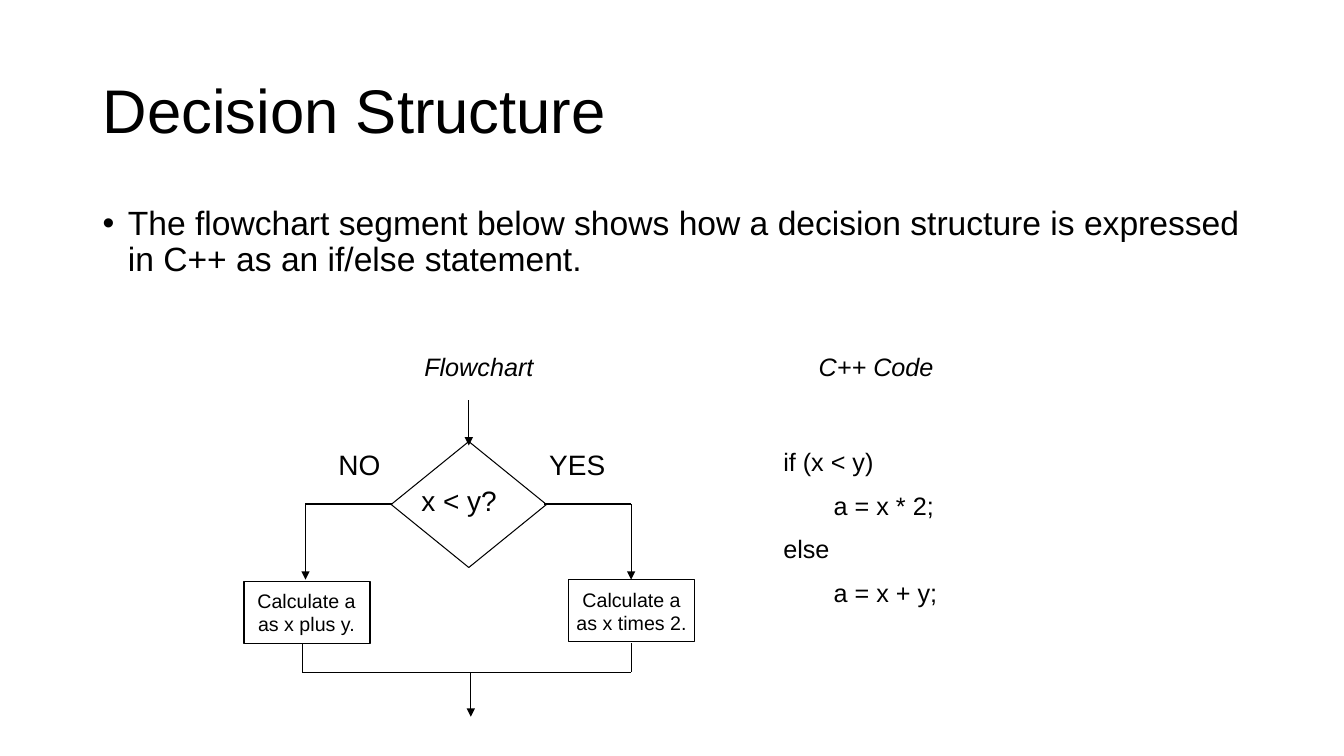
from dataclasses import dataclass

from lxml.etree import SubElement
from pptx import Presentation
from pptx.dml.color import RGBColor
from pptx.enum.shapes import MSO_CONNECTOR, MSO_SHAPE
from pptx.enum.text import MSO_ANCHOR, PP_ALIGN
from pptx.oxml.ns import qn
from pptx.util import Emu, Pt

EMU_PER_PX = 9144
BLACK = "000000"
WHITE = "FFFFFF"
FONT = "Arial"
INDENT = 25
CODE_TAB = 50


@dataclass(frozen=True)
class Label:
    text: str
    x: int
    y: int
    w: int
    h: int
    size: int = 18
    italic: bool = False
    align: PP_ALIGN = PP_ALIGN.CENTER
    anchor: MSO_ANCHOR = MSO_ANCHOR.TOP
    line_spacing: float = 1.0
    space_before: float = 0
    bullet: bool = False


@dataclass(frozen=True)
class Node:
    kind: MSO_SHAPE
    x: int
    y: int
    w: int
    h: int


@dataclass(frozen=True)
class Line:
    x1: int
    y1: int
    x2: int
    y2: int
    arrow: bool = False


NODES = [
    Node(MSO_SHAPE.RECTANGLE, 242, 577, 125, 61),
    Node(MSO_SHAPE.FLOWCHART_DECISION, 388, 438, 154, 125),
    Node(MSO_SHAPE.RECTANGLE, 564, 575, 125, 61),
]

LINES = [
    Line(389, 500, 303, 500),
    Line(303, 500, 303, 575, arrow=True),
    Line(626, 500, 540, 500),
    Line(626, 500, 626, 575, arrow=True),
    Line(300, 638, 300, 667),
    Line(626, 638, 626, 667),
    Line(626, 667, 300, 667),
    Line(467, 667, 467, 711, arrow=True),
    Line(465, 397, 465, 442, arrow=True),
]

CODE = "if (x < y)\n\ta = x * 2;\nelse\n\ta = x + y;"
BODY = ("The flowchart segment below shows how a decision structure "
        "is expressed in C++ as an if/else statement.")

LABELS = [
    Label("Decision Structure", 92, 40, 1150, 145, 44, align=PP_ALIGN.LEFT,
          anchor=MSO_ANCHOR.MIDDLE, line_spacing=0.9),
    Label(BODY, 92, 200, 1150, 476, 24, align=PP_ALIGN.LEFT,
          line_spacing=0.9, bullet=True),
    Label("YES", 531, 439, 83, 43, 20),
    Label("NO", 315, 439, 83, 43, 20),
    Label("x < y?", 408, 475, 122, 43, 20, align=PP_ALIGN.LEFT),
    Label("Calculate a as x times 2.", 560, 578, 133, 57, 14),
    Label("Calculate a as x plus y.", 240, 579, 128, 57, 14),
    Label(CODE, 767, 438, 321, 176, align=PP_ALIGN.LEFT, space_before=9.5),
    Label("Flowchart", 388, 344, 174, 40, italic=True),
    Label("C++ Code", 782, 344, 174, 40, italic=True),
]


def px(n: int) -> Emu:
    """Convert layout pixels to EMU."""
    return Emu(n * EMU_PER_PX)


def color(value: str) -> RGBColor:
    """Turn a hex string into a colour."""
    return RGBColor.from_string(value)


def add_node(s, node: Node) -> None:
    """Draw an outlined flowchart symbol."""
    sp = s.shapes.add_shape(node.kind, px(node.x), px(node.y), px(node.w), px(node.h))
    sp.shadow.inherit = False
    sp.fill.background()
    sp.line.color.rgb = color(BLACK)
    sp.line.width = Pt(0.75)


def add_line(s, line: Line) -> None:
    """Draw a flow line, with an arrowhead at its end if asked."""
    cx = s.shapes.add_connector(MSO_CONNECTOR.STRAIGHT, px(line.x1), px(line.y1),
                                px(line.x2), px(line.y2))
    cx.line.color.rgb = color(BLACK)
    cx.line.width = Pt(0.75)
    if line.arrow:
        SubElement(cx.line._get_or_add_ln(), qn("a:tailEnd"), type="triangle")
    SubElement(cx._element.spPr, qn("a:effectLst"))


def add_label(s, label: Label) -> None:
    """Draw a text box with one paragraph per line of text."""
    sp = s.shapes.add_textbox(px(label.x), px(label.y), px(label.w), px(label.h))
    tf = sp.text_frame
    tf.word_wrap = True
    tf.vertical_anchor = label.anchor
    tf.text = label.text
    for i, p in enumerate(tf.paragraphs):
        p.alignment = label.align
        p.line_spacing = label.line_spacing
        p.space_before = Pt(label.space_before if i else 0)
        pPr = p._p.get_or_add_pPr()
        if label.bullet:
            pPr.set("marL", str(px(INDENT)))
            pPr.set("indent", str(px(-INDENT)))
            SubElement(pPr, qn("a:buFont"), typeface=FONT)
            SubElement(pPr, qn("a:buChar"), char="•")
        if p.text.startswith("\t"):
            tabs = SubElement(pPr, qn("a:tabLst"))
            SubElement(tabs, qn("a:tab"), pos=str(px(CODE_TAB)), algn="l")
        for r in p.runs:
            r.font.name = FONT
            r.font.size = Pt(label.size)
            r.font.italic = label.italic
            r.font.color.rgb = color(BLACK)


def main() -> None:
    """Build the decision structure slide."""
    prs = Presentation()
    prs.slide_width, prs.slide_height = px(1333), px(750)
    s = prs.slides.add_slide(prs.slide_layouts[6])
    s.background.fill.solid()
    s.background.fill.fore_color.rgb = color(WHITE)
    for node in NODES:
        add_node(s, node)
    for line in LINES:
        add_line(s, line)
    for label in LABELS:
        add_label(s, label)
    prs.save("out.pptx")


if __name__ == "__main__":
    main()
